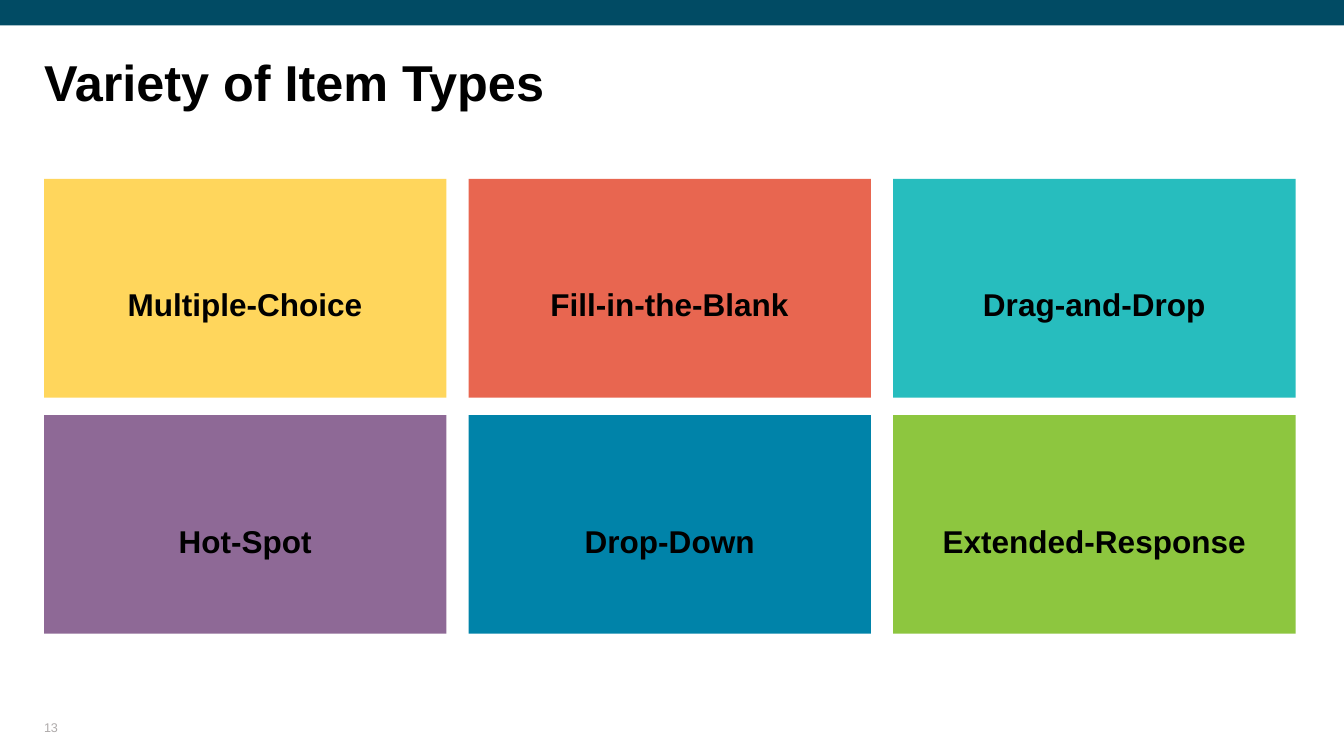
"""Build a slide showing six item types as a grid of coloured tiles."""
from dataclasses import dataclass

import pptx
import pptx.dml.color
import pptx.enum.shapes
import pptx.enum.text
import pptx.util
from pptx.util import Cm


@dataclass(frozen=True)
class Theme:
    font: str = "Arial"
    banner: str = "014B64"
    text: str = "000000"
    muted: str = "AFABAB"
    tiles: tuple = ("FFD65C", "E86650", "27BDBE", "8E6996", "0083A9", "8DC63F")
    title_size: float = 36
    tile_size: float = 22.5
    number_size: float = 9


theme = Theme()


def add_block(left, top, width, height, fill):
    block = slide.shapes.add_shape(
        pptx.enum.shapes.MSO_SHAPE.RECTANGLE, left, top, width, height)
    block.shadow.inherit = False
    block.fill.solid()
    block.fill.fore_color.rgb = pptx.dml.color.RGBColor.from_string(fill)
    block.line.fill.background()
    return block


def write(shape, text, size, color, bold, align, anchor, margins=(0, 0, 0, 0)):
    frame = shape.text_frame
    frame.word_wrap = True
    frame.vertical_anchor = anchor
    frame.margin_left, frame.margin_top, frame.margin_right, frame.margin_bottom = margins
    frame.text = text
    paragraph = frame.paragraphs[0]
    paragraph.alignment = align
    paragraph.line_spacing = 0.9 if bold else 1.0
    font = paragraph.runs[0].font
    font.name = theme.font
    font.size = pptx.util.Pt(size)
    font.bold = bold
    font.color.rgb = pptx.dml.color.RGBColor.from_string(color)


Align = pptx.enum.text.PP_ALIGN
Anchor = pptx.enum.text.MSO_ANCHOR

presentation = pptx.Presentation()
presentation.slide_width = Cm(33.87)
presentation.slide_height = Cm(19.05)
slide = presentation.slides.add_slide(presentation.slide_layouts[6])

margin = Cm(1.11)
add_block(0, 0, presentation.slide_width, Cm(0.64), theme.banner)

title = slide.shapes.add_textbox(margin, Cm(1.45), Cm(31.52), Cm(2.26))
write(title, "Variety of Item Types", theme.title_size, theme.text, True,
      Align.LEFT, Anchor.TOP)

item_types = ("Multiple-Choice", "Fill-in-the-Blank", "Drag-and-Drop",
              "Hot-Spot", "Drop-Down", "Extended-Response")
columns = 3
tile_width, tile_height = Cm(10.14), Cm(5.51)
column_step, row_step = Cm(10.7), Cm(5.95)
tile_margins = (Cm(0.64), Cm(2.79), Cm(0.64), Cm(0.13))

for index, (item_type, fill) in enumerate(zip(item_types, theme.tiles)):
    row, column = divmod(index, columns)
    tile = add_block(margin + column * column_step, Cm(4.51) + row * row_step,
                     tile_width, tile_height, fill)
    write(tile, item_type, theme.tile_size, theme.text, True,
          Align.CENTER, Anchor.TOP, tile_margins)

page_number = slide.shapes.add_textbox(margin, Cm(17.91), Cm(7.62), Cm(0.61))
write(page_number, "13", theme.number_size, theme.muted, False,
      Align.LEFT, Anchor.BOTTOM)

presentation.save("out.pptx")
